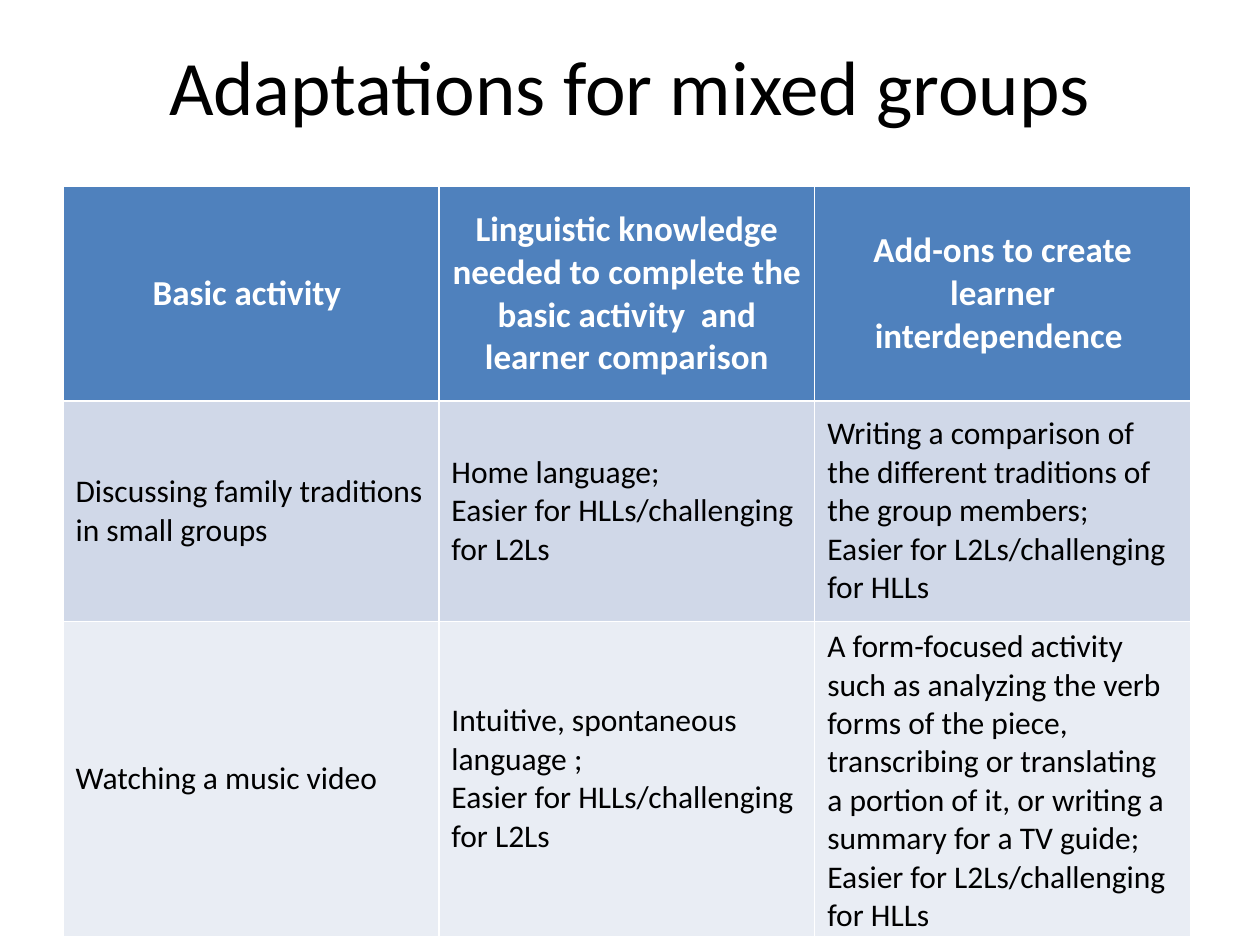
from typing import NamedTuple

from pptx import Presentation
from pptx.dml.color import RGBColor
from pptx.enum.text import MSO_ANCHOR, PP_ALIGN
from pptx.util import Pt


class Style(NamedTuple):
    size: float
    color: str
    bold: bool = False
    align: PP_ALIGN = PP_ALIGN.LEFT


class Row(NamedTuple):
    height: float
    fill: str
    style: Style
    cells: tuple[str, ...]


TITLE = Style(44, "000000", align=PP_ALIGN.CENTER)
HEAD = Style(20, "FFFFFF", True, PP_ALIGN.CENTER)
BODY = Style(18, "000000")
FOR_HERITAGE = "Easier for HLLs/challenging for L2Ls"
FOR_SECOND = "Easier for L2Ls/challenging for HLLs"

ROWS = [
    Row(122.4, "4F81BD", HEAD, (
        "Basic activity ",
        "Linguistic knowledge needed to complete the basic activity  and learner comparison",
        "Add-ons to create learner interdependence ",
    )),
    Row(126, "D0D8E8", BODY, (
        "Discussing family traditions in small groups",
        f"Home language;\n{FOR_HERITAGE}",
        "Writing a comparison of the different traditions of the group members;\n"
        f"{FOR_SECOND}",
    )),
    Row(163.4, "E9EDF4", BODY, (
        "Watching a music video",
        f"Intuitive, spontaneous language ;\n{FOR_HERITAGE}",
        "A form-focused activity such as analyzing the verb forms of the piece, "
        "transcribing or translating a portion of it, or writing a summary "
        f"for a TV guide;\n{FOR_SECOND}",
    )),
]


def color(code: str) -> RGBColor:
    return RGBColor.from_string(code)


def write(frame, text: str, style: Style) -> None:
    """Fill a text frame, one paragraph for each line of text."""
    frame.word_wrap = True
    frame.text = text
    for par in frame.paragraphs:
        par.alignment = style.align
        par.font.name = "Calibri"
        par.font.size = Pt(style.size)
        par.font.bold = style.bold
        par.font.color.rgb = color(style.color)


def add_title(slide, text: str) -> None:
    box = slide.shapes.add_textbox(Pt(36), Pt(9.4), Pt(648), Pt(78.5))
    box.text_frame.vertical_anchor = MSO_ANCHOR.MIDDLE
    write(box.text_frame, text, TITLE)


def add_grid(slide, rows: list[Row]) -> None:
    """Add the table; its built-in style draws the white cell borders."""
    count = len(rows[0].cells)
    high = sum(row.height for row in rows)
    table = slide.shapes.add_table(
        len(rows), count, Pt(36), Pt(106.6), Pt(644.4), Pt(high)).table
    for col in table.columns:
        col.width = Pt(644.4 / count)
    for line, row in zip(table.rows, rows):
        line.height = Pt(row.height)
        for cell, text in zip(line.cells, row.cells):
            cell.fill.solid()
            cell.fill.fore_color.rgb = color(row.fill)
            cell.vertical_anchor = MSO_ANCHOR.MIDDLE
            write(cell.text_frame, text, row.style)


def main() -> None:
    deck = Presentation()
    deck.slide_width, deck.slide_height = Pt(720), Pt(540)
    slide = deck.slides.add_slide(deck.slide_layouts[6])
    add_title(slide, "Adaptations for mixed groups")
    add_grid(slide, ROWS)
    deck.save("out.pptx")


if __name__ == "__main__":
    main()
